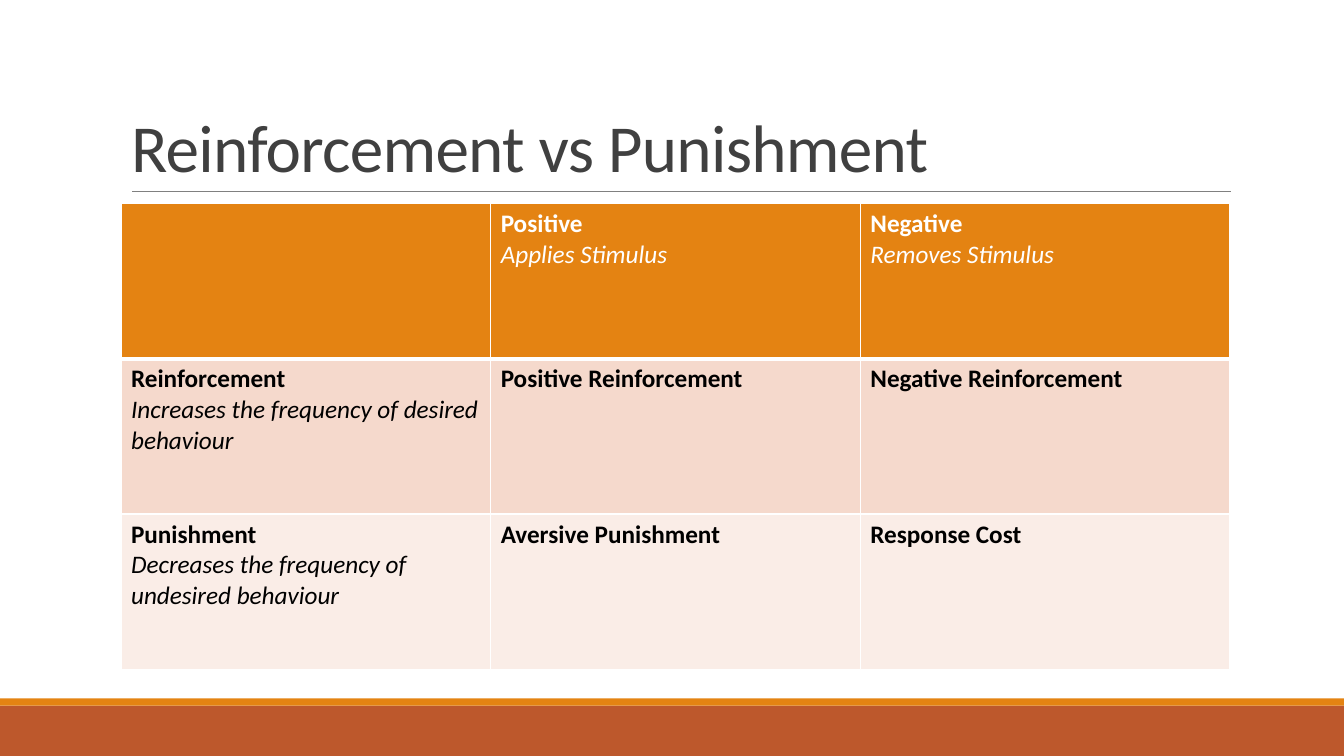
"""Build a slide that contrasts reinforcement and punishment in a table."""
from dataclasses import dataclass

from lxml import etree
from pptx import Presentation
from pptx.dml.color import RGBColor
from pptx.enum.shapes import MSO_CONNECTOR, MSO_SHAPE
from pptx.enum.text import MSO_ANCHOR, PP_ALIGN
from pptx.oxml.ns import qn
from pptx.util import Inches, Pt

STRAIGHT = MSO_CONNECTOR.STRAIGHT
RECTANGLE = MSO_SHAPE.RECTANGLE
BOTTOM, TOP = MSO_ANCHOR.BOTTOM, MSO_ANCHOR.TOP
LEFT = PP_ALIGN.LEFT
TITLE_ONLY = 5
SLIDE_WIDTH, SLIDE_HEIGHT = 13.33, 7.5


@dataclass(frozen=True)
class Theme:
    """Colours, font and type sizes of the slide."""
    font: str = "Calibri"
    title_size: int = 48
    body_size: int = 18
    title: str = "404040"
    rule: str = "808080"
    orange: str = "E48312"
    rust: str = "BD582C"
    white: str = "FFFFFF"
    black: str = "000000"
    row_fills: tuple = ("E48312", "F5D9CC", "FAEDE7")


THEME = Theme()

MATRIX = [
    [(), ("Positive", "Applies Stimulus"), ("Negative", "Removes Stimulus")],
    [("Reinforcement", "Increases the frequency of desired behaviour"),
     ("Positive Reinforcement",), ("Negative Reinforcement",)],
    [("Punishment", "Decreases the frequency of undesired behaviour"),
     ("Aversive Punishment",), ("Response Cost",)],
]


def rgb(colour):
    """Turn a hex string into a colour."""
    return RGBColor.from_string(colour)


def write(paragraph, text, *, size, colour, bold=False, italic=False, spacing=None):
    """Write formatted text into a paragraph."""
    paragraph.alignment = LEFT
    run = paragraph.add_run()
    run.text = text
    run.font.name = THEME.font
    run.font.size = Pt(size)
    run.font.color.rgb = rgb(colour)
    run.font.bold = bold
    run.font.italic = italic
    if spacing is not None:
        run.font._element.set("spc", str(int(spacing * 100)))


def add_band(slide, left, top, width, height, colour):
    """Add a plain filled band."""
    band = slide.shapes.add_shape(
        RECTANGLE, Inches(left), Inches(top), Inches(width), Inches(height))
    band.shadow.inherit = False
    band.fill.solid()
    band.fill.fore_color.rgb = rgb(colour)
    band.line.fill.background()


def add_footer(slide, left, top, width, height):
    """Add the rust footer with its thin orange stripe on top."""
    stripe = 0.07
    add_band(slide, left, top + stripe, width, height - stripe, THEME.rust)
    add_band(slide, left, top, width, stripe, THEME.orange)


def add_heading(slide, text, left, top, width, height):
    """Place the title and the rule under it."""
    rule_left, rule_right = left + 0.11, left + width + 0.01
    bottom = Inches(top + height)
    rule = slide.shapes.add_connector(
        STRAIGHT, Inches(rule_left), bottom, Inches(rule_right), bottom)
    rule.line.color.rgb = rgb(THEME.rule)
    rule.line.width = Pt(0.5)
    etree.SubElement(rule._element.spPr, qn("a:effectLst"))

    title = slide.shapes.title
    title.left, title.top = Inches(left), Inches(top)
    title.width, title.height = Inches(width), Inches(height)
    frame = title.text_frame
    frame.word_wrap = True
    frame.vertical_anchor = BOTTOM
    paragraph = frame.paragraphs[0]
    paragraph.line_spacing = 0.85
    write(paragraph, text, size=THEME.title_size, colour=THEME.title, spacing=-0.5)


def set_borders(cell, top, bottom):
    """Draw white cell borders with the given top and bottom widths."""
    properties = cell._tc.get_or_add_tcPr()
    for side, width in (("L", 1), ("R", 1), ("T", top), ("B", bottom)):
        line = etree.SubElement(properties, qn(f"a:ln{side}"), w=str(Pt(width)))
        fill = etree.SubElement(line, qn("a:solidFill"))
        etree.SubElement(fill, qn("a:srgbClr"), val=THEME.white)


def add_matrix(slide, rows, left, top, width, height):
    """Add the table with a coloured header and tinted rows."""
    table = slide.shapes.add_table(
        len(rows), len(rows[0]), Inches(left), Inches(top),
        Inches(width), Inches(height)).table
    for column in table.columns:
        column.width = Inches(width / len(rows[0]))
    for r, row in enumerate(rows):
        table.rows[r].height = Inches(height / len(rows))
        colour = THEME.white if r == 0 else THEME.black
        for c, lines in enumerate(row):
            cell = table.cell(r, c)
            set_borders(cell, top=3 if r == 1 else 1, bottom=3 if r == 0 else 1)
            cell.fill.solid()
            cell.fill.fore_color.rgb = rgb(THEME.row_fills[r])
            cell.vertical_anchor = TOP
            frame = cell.text_frame
            for i, text in enumerate(lines):
                paragraph = frame.add_paragraph() if i else frame.paragraphs[0]
                write(paragraph, text, size=THEME.body_size, colour=colour,
                      bold=i == 0, italic=i > 0)


def main():
    """Build and save the presentation."""
    deck = Presentation()
    deck.slide_width, deck.slide_height = Inches(SLIDE_WIDTH), Inches(SLIDE_HEIGHT)
    slide = deck.slides.add_slide(deck.slide_layouts[TITLE_ONLY])
    slide.background.fill.solid()
    slide.background.fill.fore_color.rgb = rgb(THEME.white)
    add_footer(slide, 0, 6.93, SLIDE_WIDTH, 0.57)
    add_heading(slide, "Reinforcement vs Punishment", 1.2, 0.31, 11, 1.59)
    add_matrix(slide, MATRIX, 1.2, 2.02, 11, 4.62)
    deck.save("out.pptx")


if __name__ == "__main__":
    main()
